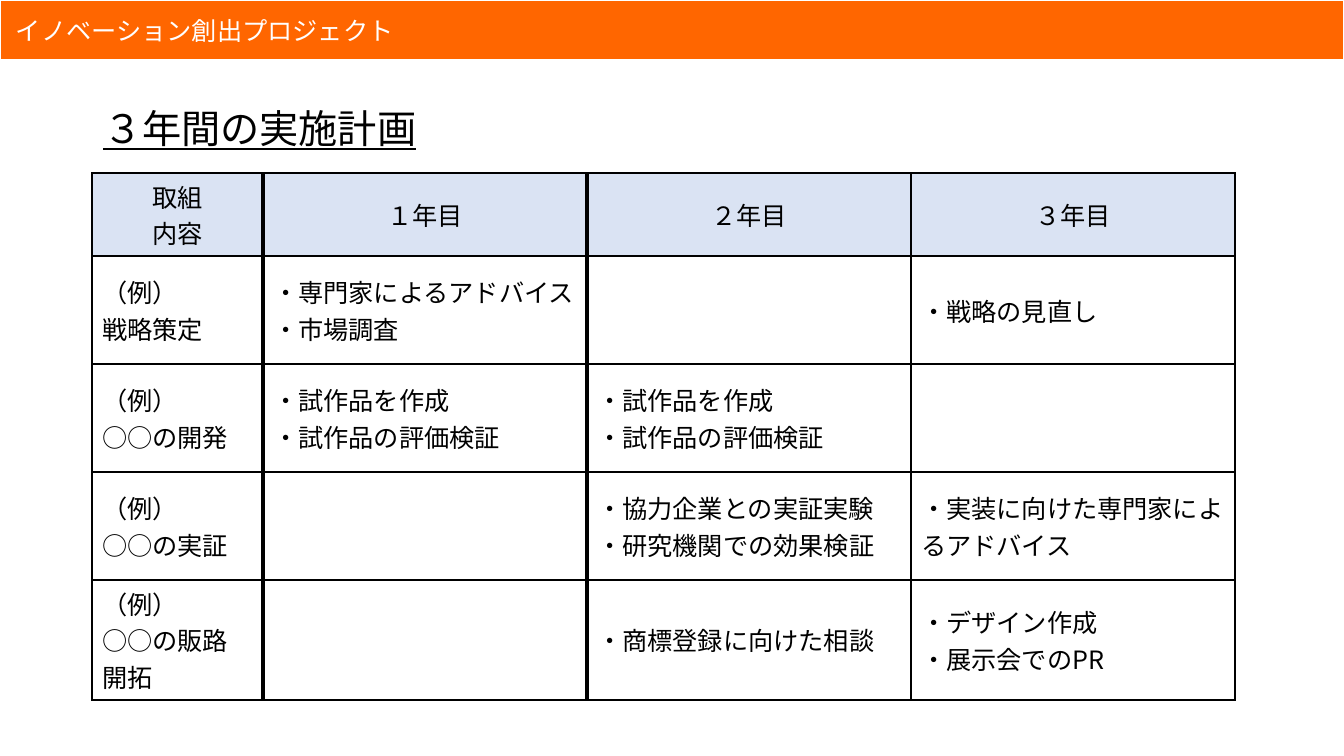
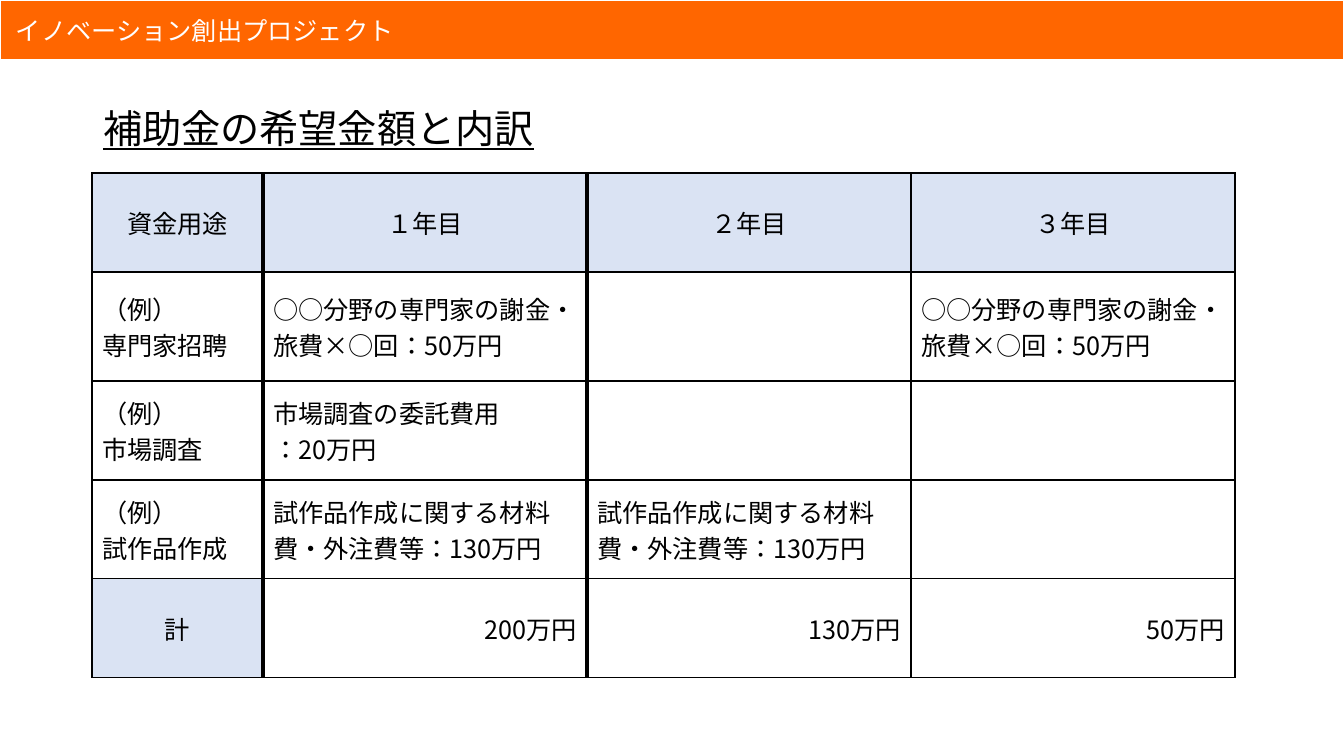
from pptx import Presentation
from pptx.dml.color import RGBColor
from pptx.enum.lang import MSO_LANGUAGE_ID
from pptx.enum.shapes import MSO_SHAPE
from pptx.enum.text import MSO_ANCHOR, MSO_AUTO_SIZE, PP_ALIGN
from pptx.oxml.ns import qn
from pptx.util import Emu, Pt
from lxml.etree import SubElement

FONT = "Noto Sans CJK JP"
ORANGE = RGBColor(0xFF, 0x66, 0x00)
PALE_BLUE = RGBColor(0xDA, 0xE3, 0xF3)
WHITE = RGBColor(0xFF, 0xFF, 0xFF)
BLACK = RGBColor(0x00, 0x00, 0x00)

# Content: each cell is text, one paragraph per line
PROJECT = "イノベーション創出プロジェクト"
YEARS = ["１年目", "２年目", "３年目"]
EXPERT_FEE = "○○分野の専門家の謝金・旅費×○回：50万円"
PROTOTYPE_FEE = "試作品作成に関する材料費・外注費等：130万円"
PROTOTYPE_TASKS = "・試作品を作成\n・試作品の評価検証"
PAGES = [
    {
        "title": "３年間の実施計画",
        "heights": [83, 108, 108, 108, 120],
        "has_total": False,
        "rows": [
            ["取組\n内容", *YEARS],
            ["（例）\n戦略策定", "・専門家によるアドバイス\n・市場調査", "", "・戦略の見直し"],
            ["（例）\n○○の開発", PROTOTYPE_TASKS, PROTOTYPE_TASKS, ""],
            ["（例）\n○○の実証", "", "・協力企業との実証実験\n・研究機関での効果検証",
             "・実装に向けた専門家によるアドバイス"],
            ["（例）\n○○の販路開拓", "", "・商標登録に向けた相談",
             "・デザイン作成\n・展示会でのPR"],
        ],
    },
    {
        "title": "補助金の希望金額と内訳",
        "heights": [99, 109, 99, 99, 99],
        "has_total": True,
        "rows": [
            ["資金用途", *YEARS],
            ["（例）\n専門家招聘", EXPERT_FEE, "", EXPERT_FEE],
            ["（例）\n市場調査", "市場調査の委託費用\n：20万円", "", ""],
            ["（例）\n試作品作成", PROTOTYPE_FEE, PROTOTYPE_FEE, ""],
            ["計", "200万円", "130万円", "50万円"],
        ],
    },
]

# Geometry in px
SLIDE_WIDTH, SLIDE_HEIGHT = 1344, 756
BAND = (0, 0, SLIDE_WIDTH, 60)
TITLE = (93, 75, 1159, 111)
TABLE_LEFT, TABLE_TOP = 92, 173
COLUMN_WIDTHS = [171, 324, 324, 324]
THICK_EDGES = (1, 2)  # column edges, counted from the table's left side


def px(length):
    return Emu(round(length * 914400 / 100.8))


def write(frame, text, size=18, color=BLACK, align=PP_ALIGN.LEFT,
          underline=None, line_spacing=None):
    frame.word_wrap = True
    for index, line in enumerate(text.split("\n")):
        para = frame.add_paragraph() if index else frame.paragraphs[0]
        para.alignment = align
        para.line_spacing = line_spacing
        if not line:
            continue
        span = para.add_run()
        span.text = line
        font = span.font
        font.size, font.name, font.underline = Pt(size), FONT, underline
        font.color.rgb = color
        font.language_id = MSO_LANGUAGE_ID.JAPANESE
        latin = font._element.find(qn("a:latin"))
        east_asian = latin.makeelement(qn("a:ea"), {"typeface": FONT})
        latin.addnext(east_asian)


def set_borders(cell, column):
    properties = cell._tc.get_or_add_tcPr()
    edges = {"L": column, "R": column + 1, "T": None, "B": None}
    for side, edge in edges.items():
        width = Pt(3 if edge in THICK_EDGES else 1)
        line = SubElement(properties, qn(f"a:ln{side}"), w=str(width))
        fill = SubElement(line, qn("a:solidFill"))
        SubElement(fill, qn("a:srgbClr"), val=str(BLACK))


def add_band(page, layout):
    """Draw the project band and hand it to the layout that all pages share."""
    band = page.shapes.add_shape(MSO_SHAPE.RECTANGLE, *map(px, BAND))
    band.shadow.inherit = False
    band.fill.solid()
    band.fill.fore_color.rgb = ORANGE
    band.line.color.rgb = WHITE
    band.line.width = Pt(1.5)
    frame = band.text_frame
    frame.vertical_anchor = MSO_ANCHOR.MIDDLE
    frame.margin_left = px(16)
    write(frame, PROJECT, color=WHITE)
    layout.shapes.element.append(band.element)


def add_title(page, text):
    title = page.shapes.title
    title.left, title.top, title.width, title.height = map(px, TITLE)
    frame = title.text_frame
    frame.auto_size = MSO_AUTO_SIZE.NONE
    frame.vertical_anchor = MSO_ANCHOR.MIDDLE
    write(frame, text, size=28, underline=True, line_spacing=0.9)


def add_grid(page, rows, heights, has_total):
    area = (TABLE_LEFT, TABLE_TOP, sum(COLUMN_WIDTHS), sum(heights))
    table = page.shapes.add_table(
        len(rows), len(COLUMN_WIDTHS), *map(px, area)).table
    table.first_row = table.horz_banding = False
    for column, width in zip(table.columns, COLUMN_WIDTHS):
        column.width = px(width)
    for row, height in zip(table.rows, heights):
        row.height = px(height)

    for r, texts in enumerate(rows):
        is_total = has_total and r == len(rows) - 1
        for c, text in enumerate(texts):
            cell = table.cell(r, c)
            is_heading = r == 0 or (is_total and c == 0)
            set_borders(cell, c)
            if is_heading:
                cell.fill.solid()
                cell.fill.fore_color.rgb = PALE_BLUE
                align = PP_ALIGN.CENTER
            else:
                cell.fill.background()
                align = PP_ALIGN.RIGHT if is_total else PP_ALIGN.LEFT
            cell.vertical_anchor = MSO_ANCHOR.MIDDLE
            write(cell.text_frame, text, align=align)


def main():
    deck = Presentation()
    deck.slide_width, deck.slide_height = px(SLIDE_WIDTH), px(SLIDE_HEIGHT)
    layout = deck.slide_layouts.get_by_name("Title Only")
    for index, content in enumerate(PAGES):
        page = deck.slides.add_slide(layout)
        if index == 0:
            add_band(page, layout)
        add_title(page, content["title"])
        add_grid(page, content["rows"], content["heights"], content["has_total"])
    deck.save("out.pptx")


if __name__ == "__main__":
    main()
